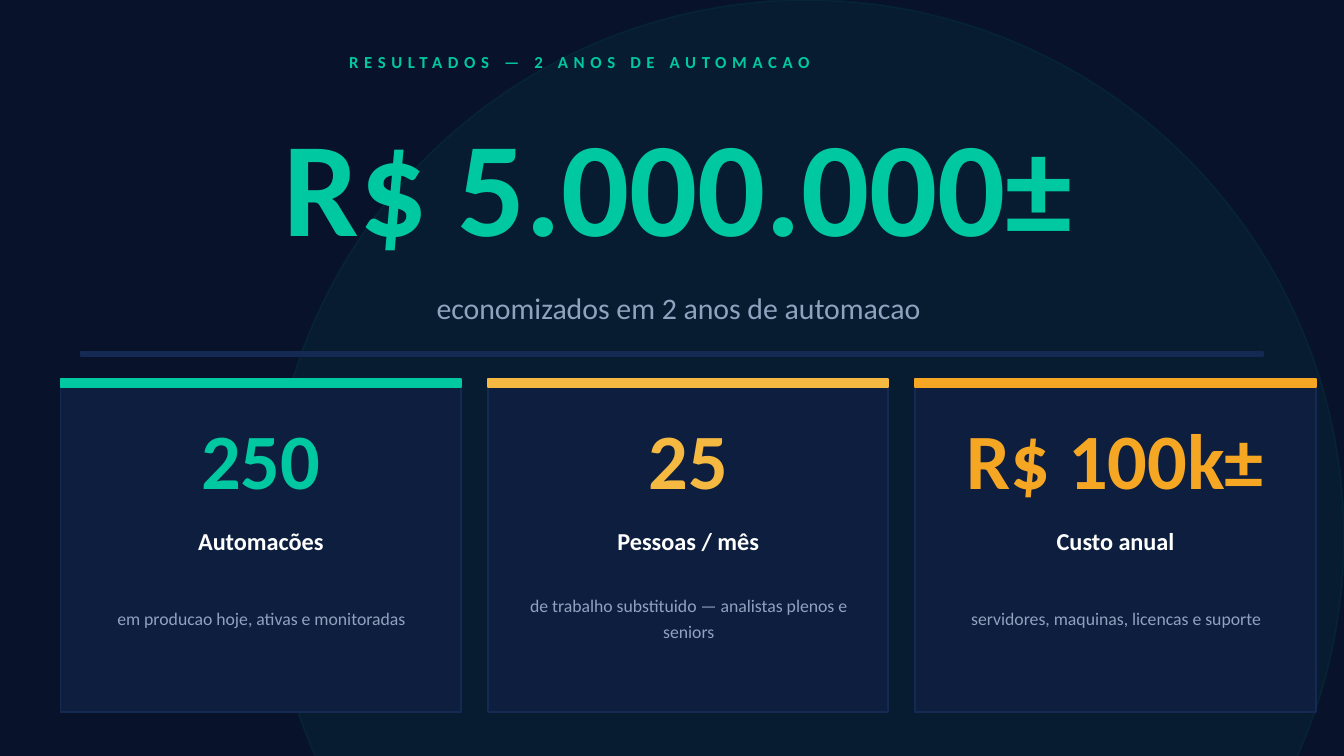
from lxml import etree
from pptx import Presentation
from pptx.dml.color import RGBColor
from pptx.enum import shapes, text
from pptx.oxml.ns import qn
from pptx.util import Inches, Pt

NAVY = RGBColor(0x08, 0x12, 0x2A)
CARD = RGBColor(0x0D, 0x1E, 0x3E)
BORDER = RGBColor(0x15, 0x2A, 0x52)
GREEN = RGBColor(0x00, 0xC8, 0xA0)
YELLOW = RGBColor(0xF5, 0xB9, 0x42)
ORANGE = RGBColor(0xF5, 0xA6, 0x23)
GREY = RGBColor(0x8F, 0xA3, 0xBF)
WHITE = RGBColor(0xFF, 0xFF, 0xFF)

CARD_LEFT, CARD_TOP, CARD_W, CARD_H = 0.45, 2.82, 2.98, 2.48
CARD_STEP = CARD_W + 0.2
CARDS = [
    ("250", "Automacões", "em producao hoje, ativas e monitoradas", GREEN),
    ("25", "Pessoas / mês",
     "de trabalho substituido — analistas plenos e seniors", YELLOW),
    ("R$ 100k±", "Custo anual",
     "servidores, maquinas, licencas e suporte", ORANGE),
]


def add_block(s, kind, box, fill, line):
    sp = s.shapes.add_shape(kind, *map(Inches, box))
    sp.shadow.inherit = False
    sp.fill.solid()
    sp.fill.fore_color.rgb = fill
    sp.line.color.rgb = line
    sp.line.width = Pt(1)
    return sp


def set_opacity(sp, percent):
    """Apply the same opacity to a shape's fill and outline."""
    for clr in sp._element.spPr.iter(qn("a:srgbClr")):
        etree.SubElement(clr, qn("a:alpha"), val=str(percent * 1000))


def format_text(sp, words, size, color, bold=False, inset=0,
                align=text.PP_ALIGN.CENTER, line_spacing=None):
    tf = sp.text_frame
    frame = dict(word_wrap=True, auto_size=text.MSO_AUTO_SIZE.NONE,
                 vertical_anchor=text.MSO_ANCHOR.MIDDLE,
                 margin_left=Inches(inset), margin_right=Inches(inset),
                 margin_top=Inches(inset / 2),
                 margin_bottom=Inches(inset / 2))
    for name, value in frame.items():
        setattr(tf, name, value)
    p = tf.paragraphs[0]
    p.alignment = align
    p.line_spacing = line_spacing
    r = p.add_run()
    r.text = words
    for name, value in dict(name="Calibri", size=Pt(size), bold=bold).items():
        setattr(r.font, name, value)
    r.font.color.rgb = color
    return r


def add_label(s, box, *args, **kwargs):
    sp = s.shapes.add_textbox(*map(Inches, box))
    return format_text(sp, *args, **kwargs)


def place_title(s, box, behind, *args, **kwargs):
    """Fill the title and stack it just above the shape behind it."""
    sp = s.shapes.title
    sp.left, sp.top, sp.width, sp.height = map(Inches, box)
    behind._element.addnext(sp._element)
    format_text(sp, *args, **kwargs)


def add_card(s, left, figure, label, detail, accent):
    rect = shapes.MSO_SHAPE.RECTANGLE
    add_block(s, rect, (left, CARD_TOP, CARD_W, CARD_H), CARD, BORDER)
    add_block(s, rect, (left, CARD_TOP, CARD_W, 0.06), accent, accent)
    add_label(s, (left, 2.95, CARD_W, 0.92), figure, 42, accent, bold=True)
    add_label(s, (left, 3.85, CARD_W, 0.35), label, 13, WHITE, bold=True)
    add_label(s, (left + 0.12, 4.22, 2.75, 0.72), detail, 9.5, GREY,
              line_spacing=1.25)


def main():
    prs = Presentation()
    prs.slide_width = Inches(10)
    prs.slide_height = prs.slide_width * 9 // 16
    s = prs.slides.add_slide(prs.slide_layouts[5])
    s.background.fill.solid()
    s.background.fill.fore_color.rgb = NAVY

    glow = add_block(s, shapes.MSO_SHAPE.OVAL, (2, 0, 8, 8), GREEN, GREEN)
    set_opacity(glow, 6)
    eyebrow = add_label(s, (2.5, 0.32, 4, 0.28),
                        "RESULTADOS — 2 ANOS DE AUTOMACAO", 9, GREEN,
                        bold=True, inset=0.1, align=text.PP_ALIGN.LEFT)
    eyebrow.font._element.set("spc", "300")
    place_title(s, (0.5, 0.65, 9.1, 1.42), glow, "R$ 5.000.000±", 72, GREEN,
                bold=True)
    add_label(s, (0.5, 2.08, 9.1, 0.42),
              "economizados em 2 anos de automacao", 16, GREY)
    add_block(s, shapes.MSO_SHAPE.RECTANGLE, (0.6, 2.62, 8.8, 0.03),
              BORDER, BORDER)
    for i, card in enumerate(CARDS):
        add_card(s, CARD_LEFT + i * CARD_STEP, *card)

    prs.save("out.pptx")


if __name__ == "__main__":
    main()
